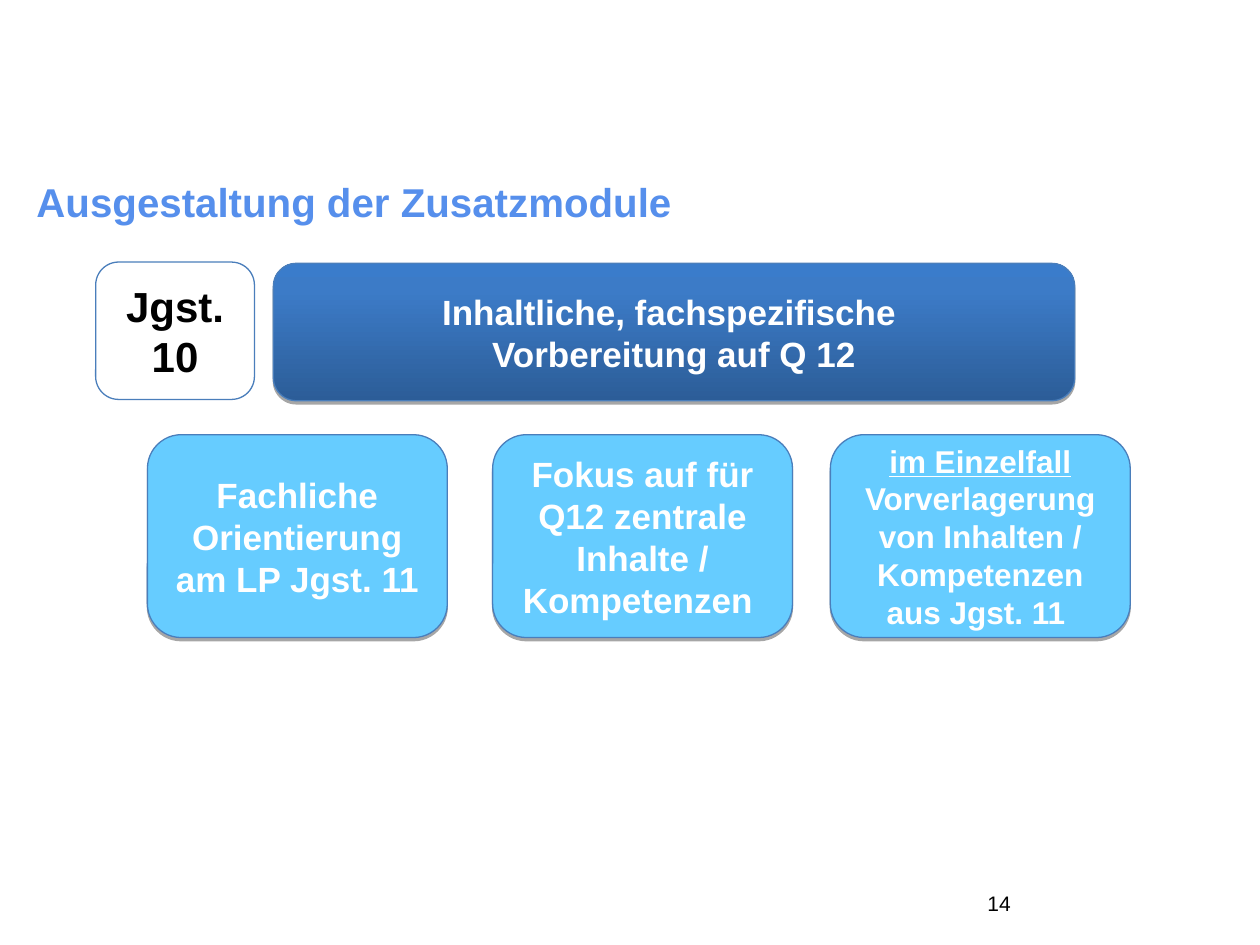
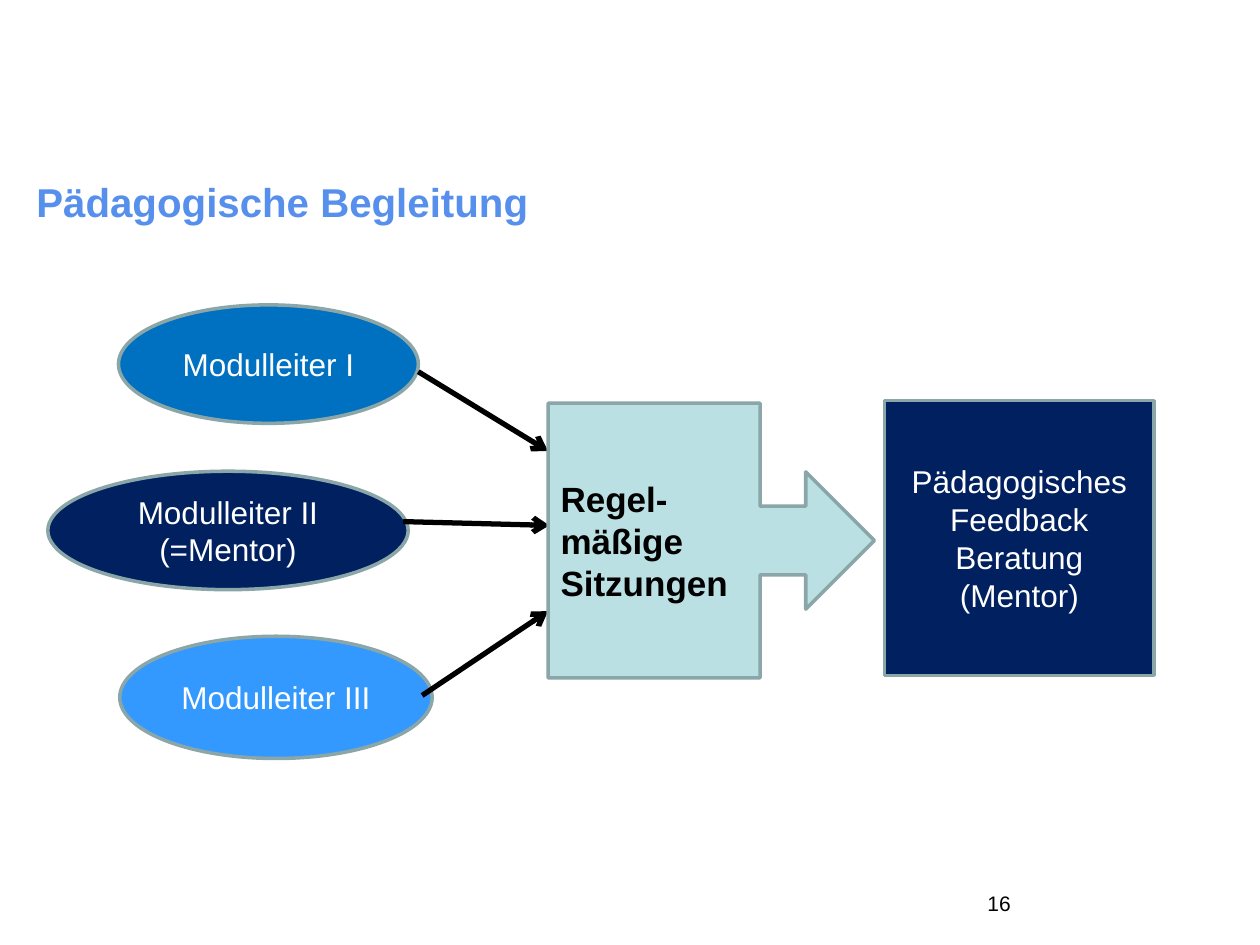
from lxml.etree import SubElement
from pptx import Presentation
from pptx.dml.color import RGBColor
from pptx.enum.shapes import MSO_CONNECTOR as Connector, MSO_SHAPE as Shape
from pptx.enum.text import MSO_ANCHOR as Anchor, PP_ALIGN as Align
from pptx.oxml import parse_xml
from pptx.oxml.ns import nsdecls, qn
from pptx.util import Inches, Pt

BLACK = RGBColor(0x00, 0x00, 0x00)
WHITE = RGBColor(0xFF, 0xFF, 0xFF)
TITLE_BLUE = RGBColor(0x56, 0x8F, 0xEC)
OUTLINE_BLUE = RGBColor(0x4A, 0x7E, 0xBB)
OUTLINE_GREY = RGBColor(0x8A, 0xA6, 0xA8)
SKY = RGBColor(0x66, 0xCC, 0xFF)
BLUE = RGBColor(0x00, 0x70, 0xC0)
NAVY = RGBColor(0x00, 0x20, 0x60)
BRIGHT_BLUE = RGBColor(0x33, 0x99, 0xFF)
PALE_TEAL = RGBColor(0xBB, 0xE0, 0xE3)
BANNER_STOPS = (
    (0, RGBColor(0x2C, 0x5D, 0x98)),
    (80, RGBColor(0x3C, 0x7B, 0xC7)),
    (100, RGBColor(0x3A, 0x7C, 0xCB)),
)


class Deck:
    font_name = "Arial"

    def __init__(self):
        self.presentation = Presentation()
        self.presentation.slide_width = Inches(10)
        self.presentation.slide_height = Inches(7.5)
        self.slide = None

    def new_slide(self, title, number):
        layout = self.presentation.slide_layouts[6]
        self.slide = self.presentation.slides.add_slide(layout)
        self.label((0.19, 1.36, 7.81, 0.45), title, 23, TITLE_BLUE, bold=True)
        self.label((6.7, 6.8, 1.42, 0.52), number, 12, BLACK,
                   align=Align.RIGHT, anchor=Anchor.BOTTOM)

    def set_text(self, shape, text, size, color, bold=False, lead="",
                 align=Align.LEFT, anchor=Anchor.MIDDLE):
        frame = shape.text_frame
        frame.word_wrap = True
        frame.vertical_anchor = anchor
        for index, line in enumerate(text.split("\n")):
            paragraph = frame.add_paragraph() if index else frame.paragraphs[0]
            paragraph.alignment = align
            runs = [(line, False)]
            if lead and not index:
                runs.insert(0, (lead, True))
            for words, underline in runs:
                run = paragraph.add_run()
                run.text = words
                style = {"name": self.font_name, "size": Pt(size),
                         "bold": bold, "underline": underline}
                for key, value in style.items():
                    setattr(run.font, key, value)
                run.font.color.rgb = color

    def label(self, box, text, size, color, anchor=Anchor.TOP, **style):
        textbox = self.slide.shapes.add_textbox(*map(Inches, box))
        self.set_text(textbox, text, size, color, anchor=anchor, **style)

    def block(self, kind, box, text, size, fill=None, outline=OUTLINE_GREY,
              outline_width=2, color=WHITE, align=Align.CENTER, **style):
        shape = self.slide.shapes.add_shape(kind, *map(Inches, box))
        shape.shadow.inherit = False
        if fill is None:
            shape.fill.background()
        else:
            shape.fill.solid()
            shape.fill.fore_color.rgb = fill
        shape.line.color.rgb = outline
        shape.line.width = Pt(outline_width)
        self.set_text(shape, text, size, color, align=align, **style)
        return shape

    def rounded(self, box, text, size, shadow=True, **style):
        shape = self.block(Shape.ROUNDED_RECTANGLE, box, text, size,
                           outline=OUTLINE_BLUE, outline_width=0.75,
                           bold=True, **style)
        if shadow:
            effects = shape.element.spPr.find(qn("a:effectLst"))
            effects.append(parse_xml(
                f'<a:outerShdw {nsdecls("a")} blurRad="0" dist="{Pt(1.8)}" '
                'dir="5400000" rotWithShape="0"><a:srgbClr val="000000">'
                '<a:alpha val="35000"/></a:srgbClr></a:outerShdw>'))
        return shape

    def gradient(self, shape, stops):
        stop_xml = "".join(
            f'<a:gs pos="{position * 1000}"><a:srgbClr val="{color}"/></a:gs>'
            for position, color in stops)
        properties = shape.element.spPr
        properties.replace(properties.find(qn("a:solidFill")), parse_xml(
            f'<a:gradFill {nsdecls("a")} rotWithShape="1"><a:gsLst>{stop_xml}'
            '</a:gsLst><a:lin ang="16200000" scaled="0"/></a:gradFill>'))

    def arrow(self, start, end):
        connector = self.slide.shapes.add_connector(
            Connector.STRAIGHT, *map(Inches, (*start, *end)))
        connector.line.color.rgb = BLACK
        connector.line.width = Pt(3)
        properties = connector.element.spPr
        SubElement(properties.find(qn("a:ln")), qn("a:tailEnd"), type="arrow")
        SubElement(properties, qn("a:effectLst"))


def build_modules(deck):
    deck.new_slide("Ausgestaltung der Zusatzmodule", "14")
    deck.rounded((0.76, 2.08, 1.26, 1.09), "Jgst. 10", 24,
                 shadow=False, color=BLACK)
    banner = deck.rounded(
        (2.17, 2.09, 6.36, 1.09),
        "Inhaltliche, fachspezifische \nVorbereitung auf Q 12", 20, fill=BLUE)
    deck.gradient(banner, BANNER_STOPS)
    aspects = (
        (1.17, "", "Fachliche Orientierung am LP Jgst. 11", 20),
        (3.91, "", "Fokus auf für Q12 zentrale Inhalte / Kompetenzen ", 20),
        (6.59, "im Einzelfall ",
         "Vorverlagerung von Inhalten / Kompetenzen aus Jgst. 11 ", 18),
    )
    for left, lead, text, size in aspects:
        deck.rounded((left, 3.45, 2.38, 1.61), text, size, fill=SKY, lead=lead)


def build_mentoring(deck):
    deck.new_slide("Pädagogische Begleitung", "16")
    leaders = (
        ((0.94, 2.42, 2.38, 0.94), "Modulleiter I", BLUE),
        ((0.38, 3.74, 2.86, 0.94), "Modulleiter II (=Mentor)", NAVY),
        ((0.95, 5.05, 2.48, 0.97), "Modulleiter III", BRIGHT_BLUE),
    )
    for box, name, fill in leaders:
        deck.block(Shape.OVAL, box, name, 18, fill=fill)
    for start, end in (
        ((3.32, 2.95), (4.35, 3.58)),
        ((3.2, 4.14), (4.36, 4.17)),
        ((3.35, 5.52), (4.35, 4.85)),
    ):
        deck.arrow(start, end)
    deck.block(Shape.RIGHT_ARROW_CALLOUT, (4.35, 3.2, 2.59, 2.18),
               "Regel-mäßige Sitzungen", 20, fill=PALE_TEAL,
               color=BLACK, bold=True, align=Align.LEFT)
    deck.block(Shape.RECTANGLE, (7.02, 3.18, 2.14, 2.18),
               "Pädagogisches Feedback\nBeratung (Mentor)", 18, fill=NAVY)


def main():
    deck = Deck()
    build_modules(deck)
    build_mentoring(deck)
    deck.presentation.save("out.pptx")


if __name__ == "__main__":
    main()
